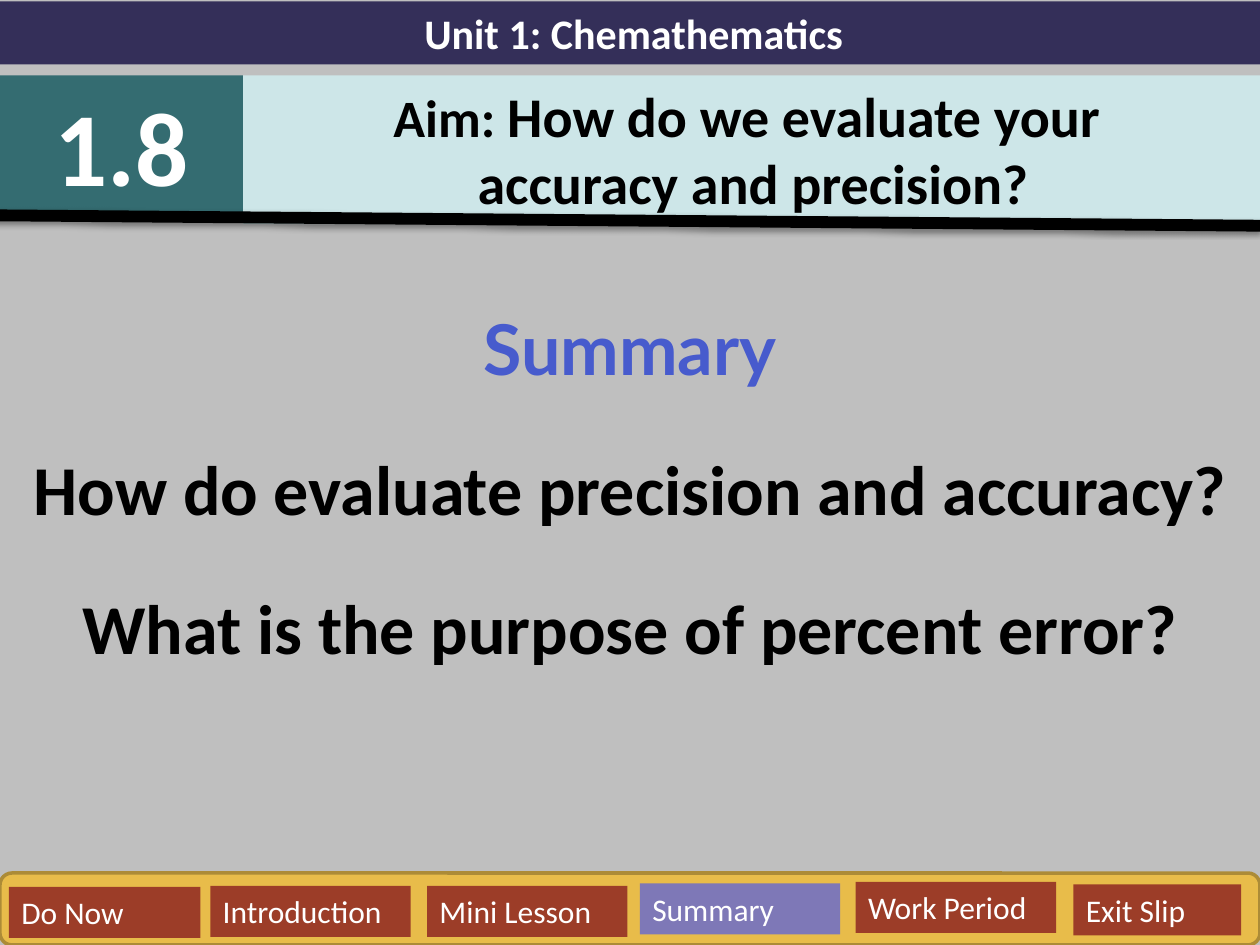
from lxml import etree
from pptx import Presentation
from pptx.dml.color import RGBColor
from pptx.enum.shapes import MSO_CONNECTOR, MSO_SHAPE
from pptx.enum.text import MSO_ANCHOR, MSO_AUTO_SIZE, PP_ALIGN
from pptx.oxml.ns import qn
from pptx.util import Cm, Pt

RECT, ROUND = MSO_SHAPE.RECTANGLE, MSO_SHAPE.ROUNDED_RECTANGLE
STRAIGHT = MSO_CONNECTOR.STRAIGHT
LEFT, MID = PP_ALIGN.LEFT, PP_ALIGN.CENTER
TOP, FIXED = MSO_ANCHOR.TOP, MSO_AUTO_SIZE.NONE

BLACK, WHITE = "000000", "FFFFFF"
RUST, VIOLET = "9C3D28", "7E78B7"


def tint(code):
    return RGBColor.from_string(code)


class Deck:
    font = "Calibri"

    def __init__(self, wide, high):
        self.prs = Presentation()
        self.prs.slide_width, self.prs.slide_height = Cm(wide), Cm(high)

    def page(self, back):
        self.slide = self.prs.slides.add_slide(self.prs.slide_layouts[5])
        fill = self.slide.background.fill
        fill.solid()
        fill.fore_color.rgb = tint(back)

    def label(self, shape, paras, color=WHITE, bold=True, align=MID,
              lead=1.0, gap=0):
        """Each paragraph is a list of (text, size, style) runs."""
        frame = shape.text_frame
        frame.word_wrap = True
        frame.auto_size = FIXED
        frame.vertical_anchor = TOP
        for i, runs in enumerate(paras):
            para = frame.add_paragraph() if i else frame.paragraphs[0]
            para.alignment = align
            para.line_spacing = lead
            para.space_before = Pt(gap)
            for text, size, *style in runs:
                run = para.add_run()
                run.text = text
                font = run.font
                font.size, font.bold = Pt(size), bold
                font.name, hue = style or (self.font, color)
                font.color.rgb = tint(hue)

    def box(self, spot, fill, edge=None, kind=RECT):
        shape = self.slide.shapes.add_shape(kind, *map(Cm, spot))
        shape.shadow.inherit = False
        shape.fill.solid()
        shape.fill.fore_color.rgb = tint(fill)
        if edge:
            shape.line.color.rgb = tint(edge)
            shape.line.width = Pt(2)
        else:
            shape.line.fill.background()
        return shape

    def title(self, spot, fill, paras):
        shape = self.slide.shapes.title
        shape.left, shape.top, shape.width, shape.height = map(Cm, spot)
        shape.fill.solid()
        shape.fill.fore_color.rgb = tint(fill)
        self.label(shape, paras, BLACK)

    def text(self, spot, paras, **look):
        self.label(self.slide.shapes.add_textbox(*map(Cm, spot)), paras, **look)

    def rule(self, ends, color, width):
        line = self.slide.shapes.add_connector(STRAIGHT, *map(Cm, ends))
        line.line.color.rgb = tint(color)
        line.line.width = Pt(width)
        # Soft shadow straight below the line
        fx = etree.SubElement(line._element.spPr, qn("a:effectLst"))
        cast = etree.SubElement(fx, qn("a:outerShdw"), blurRad="40000",
                                dist="20000", dir="5400000", rotWithShape="0")
        hue = etree.SubElement(cast, qn("a:srgbClr"), val=color)
        etree.SubElement(hue, qn("a:alpha"), val="38000")


def main():
    deck = Deck(25.4, 19.05)
    deck.page("BFBFBF")

    # Header: unit, lesson number and aim
    deck.title((4.9, 1.52, 20.57, 3), "CDE6E8", [
        [("Aim: ", 30), ("How do we evaluate your ", 32)],
        [("accuracy and precision?", 32)],
    ])
    unit = deck.box((0, 0.03, 25.55, 1.27), "342F59")
    deck.label(unit, [[("Unit 1: Chemathematics", 24)]])
    lesson = deck.box((0, 1.52, 4.9, 2.82), "346C71")
    deck.label(lesson, [[("1.8", 60)]])
    deck.rule((-0.13, 4.34, 25.4, 4.55), BLACK, 6.75)

    # Summary questions
    deck.text((0, 5.18, 25.4, 12.65), [
        [("Summary", 40, "Lato", "475BCD")],
        [("How do evaluate precision and accuracy?", 40)],
        [("What is the purpose of percent error?", 40)],
    ], color=BLACK, lead=1.5, gap=8)

    # Menu bar with the current part in violet
    deck.box((0, 17.6, 25.4, 1.45), "E8BC4A", "AC8B37", ROUND)
    for name, left, top, wide in (
        ("Do Now", 0.18, 17.88, 3.86),
        ("Introduction", 4.24, 17.86, 4.04),
        ("Mini Lesson", 8.61, 17.86, 4.04),
        ("Summary", 12.9, 17.81, 4.04),
        ("Work Period", 17.25, 17.78, 4.04),
        ("Exit Slip", 21.64, 17.83, 3.38),
    ):
        fill = VIOLET if name == "Summary" else RUST
        tab = deck.box((left, top, wide, 1.03), fill)
        deck.label(tab, [[(name, 18)]], bold=False, align=LEFT)

    deck.prs.save("out.pptx")


if __name__ == "__main__":
    main()
